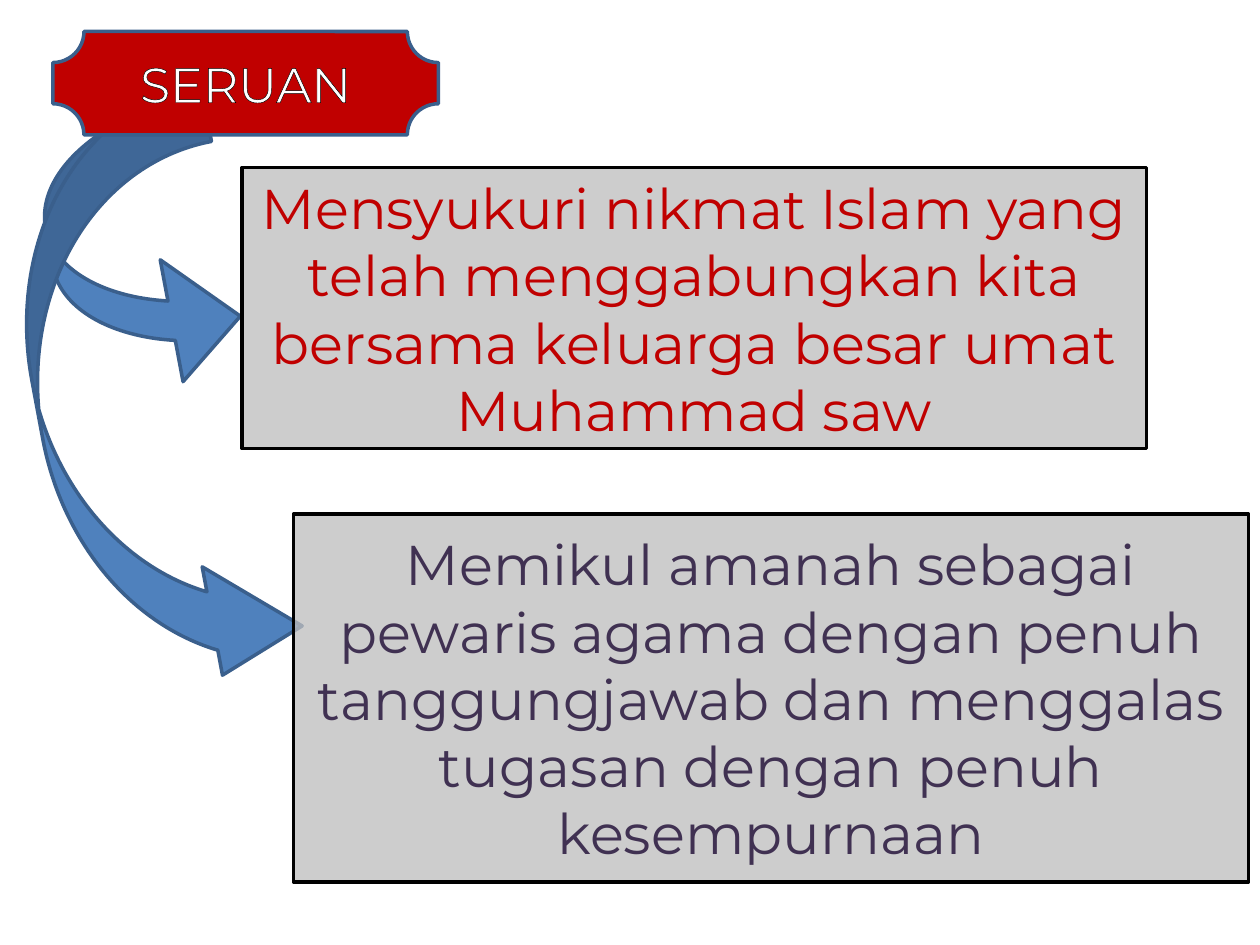
"""Build the SERUAN slide: a heading plaque with arrows to two messages."""
from lxml import etree
from pptx import Presentation
from pptx.dml.color import RGBColor
from pptx.enum import shapes, text
from pptx.oxml import ns
from pptx.util import Inches, Pt

WHITE = RGBColor(0xFF, 0xFF, 0xFF)
BLACK = RGBColor(0, 0, 0)
RED = RGBColor(0xC0, 0, 0)
PURPLE = RGBColor(0x40, 0x31, 0x52)
GREY = RGBColor(0xBF, 0xBF, 0xBF)
BLUE = RGBColor(0x4F, 0x81, 0xBD)
DARK_BLUE = RGBColor(0x3A, 0x5F, 0x8C)
FONT = "Montserrat"


def add_panel(slide, kind, box, fill, line, adjustments=()):
    """Add a filled, outlined preset shape in a box given in inches."""
    panel = slide.shapes.add_shape(kind, *map(Inches, box))
    panel.shadow.inherit = False
    for index, value in enumerate(adjustments):
        panel.adjustments[index] = value
    panel.fill.solid()
    panel.fill.fore_color.rgb = fill
    panel.line.color.rgb = line
    panel.line.width = Pt(2)
    return panel


def write_text(panel, words, size, color):
    """Write one centred paragraph in a panel and return its run."""
    frame = panel.text_frame
    frame.word_wrap = True
    frame.vertical_anchor = text.MSO_ANCHOR.MIDDLE
    para = frame.paragraphs[0]
    para.alignment = text.PP_ALIGN.CENTER
    para.font.name = FONT
    para.font.size = Pt(size)
    para.font.color.rgb = color
    span = para.add_run()
    span.text = words
    return span


def add_arrow(slide, box, adjustments):
    """Add a tilted curved arrow from the heading to a message."""
    arrow = add_panel(slide, shapes.MSO_SHAPE.CURVED_RIGHT_ARROW, box,
                      BLUE, DARK_BLUE, adjustments)
    arrow.rotation = 349.4


def add_heading(slide, box, words):
    """Add the plaque with outlined heading text."""
    plaque = add_panel(slide, shapes.MSO_SHAPE.PLAQUE, box, RED, DARK_BLUE, [0.301])
    span = write_text(plaque, words, 28, WHITE)
    outline = etree.Element(ns.qn("a:ln"), w=str(Pt(0.75)))
    fill = etree.SubElement(outline, ns.qn("a:solidFill"))
    etree.SubElement(fill, ns.qn("a:srgbClr"), val=str(BLACK))
    span.font._element.insert(0, outline)


def add_message(slide, box, words, color):
    """Add a translucent grey box with a message."""
    panel = add_panel(slide, shapes.MSO_SHAPE.RECTANGLE, box, GREY, BLACK)
    tint = panel.fill._xPr.find(ns.qn("a:solidFill"))[0]
    etree.SubElement(tint, ns.qn("a:alpha"), val="77000")
    write_text(panel, words, 32, color)


def main():
    """Build and save the deck."""
    deck = Presentation()
    deck.slide_width, deck.slide_height = Inches(10), Inches(7.5)
    slide = deck.slides.add_slide(deck.slide_layouts[6])
    add_arrow(slide, (0.41, 0.86, 1.39, 2.28), (0.229, 0.708, 0.39))
    add_arrow(slide, (0.3, 0.78, 1.75, 4.82), (0.269, 0.5, 0.396))
    add_heading(slide, (0.42, 0.25, 3.06, 0.82), "SERUAN")
    add_message(slide, (2.33, 4.08, 7.58, 2.92),
                "Memikul amanah sebagai pewaris agama dengan penuh tanggungjawab "
                "dan menggalas tugasan dengan penuh kesempurnaan", PURPLE)
    add_message(slide, (1.92, 1.33, 7.18, 2.23),
                "Mensyukuri nikmat Islam yang telah menggabungkan kita bersama "
                "keluarga besar umat Muhammad saw", RED)
    deck.save("out.pptx")


if __name__ == "__main__":
    main()
